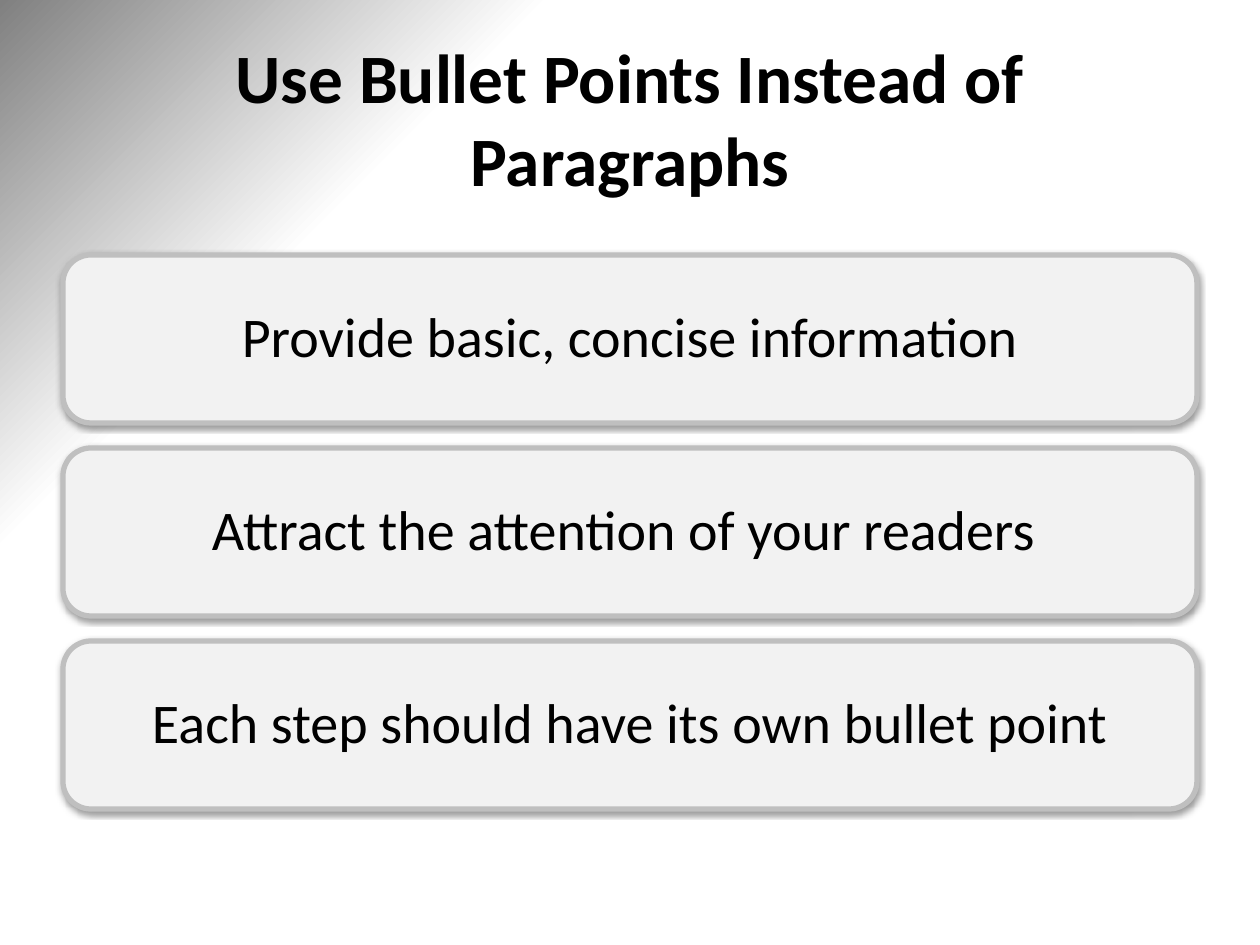
"""Build a slide with a title above three stacked bullet cards."""
import lxml.etree
import pptx
import pptx.dml.color
import pptx.enum.shapes
import pptx.enum.text
import pptx.oxml
import pptx.oxml.ns
import pptx.util

PX = 914400 / 126
BLACK = pptx.dml.color.RGBColor(0x00, 0x00, 0x00)
WHITE = pptx.dml.color.RGBColor(0xFF, 0xFF, 0xFF)
CORNER_GRAY = pptx.dml.color.RGBColor(0x80, 0x80, 0x80)
CARD_FILL = pptx.dml.color.RGBColor(0xF2, 0xF2, 0xF2)
CARD_BORDER = pptx.dml.color.RGBColor(0xBF, 0xBF, 0xBF)

LEFT, WIDTH = 63, 1134
TITLE_TOP, TITLE_HEIGHT = 38, 158
CARD_TOP, CARD_HEIGHT, CARD_PITCH = 255, 168, 193
TEXT_INSET, TEXT_MARGIN = 8, 16

TITLE = "Use Bullet Points Instead of Paragraphs"
POINTS = [
    "Provide basic, concise information",
    "Attract the attention of your readers ",
    "Each step should have its own bullet point",
]


def px(*lengths):
    return [pptx.util.Emu(round(length * PX)) for length in lengths]


def paint_background(slide):
    slide.background.fill.gradient()
    gradient = slide.element.find(".//" + pptx.oxml.ns.qn("a:gradFill"))
    radial = pptx.oxml.parse_xml(
        f'<a:gradFill {pptx.oxml.ns.nsdecls("a")} rotWithShape="1"><a:gsLst>'
        f'<a:gs pos="75000"><a:srgbClr val="{WHITE}"/></a:gs>'
        f'<a:gs pos="100000"><a:srgbClr val="{CORNER_GRAY}"/></a:gs></a:gsLst>'
        '<a:path path="circle"><a:fillToRect l="100000" t="100000"/></a:path>'
        '</a:gradFill>'
    )
    gradient.getparent().replace(gradient, radial)


def add_text(slide, text, left, top, width, height, *, size, bold=False,
             margin=None, line_spacing=None):
    frame = slide.shapes.add_textbox(*px(left, top, width, height)).text_frame
    frame.word_wrap = True
    frame.vertical_anchor = pptx.enum.text.MSO_ANCHOR.MIDDLE
    if margin is not None:
        (frame.margin_left, frame.margin_top,
         frame.margin_right, frame.margin_bottom) = px(*[margin] * 4)
    paragraph = frame.paragraphs[0]
    paragraph.alignment = pptx.enum.text.PP_ALIGN.CENTER
    paragraph.line_spacing = line_spacing
    run = paragraph.add_run()
    run.text = text
    run.font.name = "Calibri"
    run.font.size = pptx.util.Pt(size)
    run.font.bold = bold
    run.font.color.rgb = BLACK


def add_shadow(shape):
    shape.shadow.inherit = False
    effects = shape.element.spPr.find(pptx.oxml.ns.qn("a:effectLst"))
    effects.append(pptx.oxml.parse_xml(
        f'<a:outerShdw {pptx.oxml.ns.nsdecls("a")} blurRad="40000" dist="20000" '
        f'dir="5400000" rotWithShape="0"><a:srgbClr val="{BLACK}">'
        '<a:alpha val="38000"/></a:srgbClr></a:outerShdw>'
    ))


def add_card(slide, point, top):
    card = slide.shapes.add_shape(
        pptx.enum.shapes.MSO_SHAPE.ROUNDED_RECTANGLE,
        *px(LEFT, top, WIDTH, CARD_HEIGHT))
    card.fill.solid()
    card.fill.fore_color.rgb = CARD_FILL
    card.line.color.rgb = CARD_BORDER
    card.line.width = pptx.util.Pt(3)
    add_shadow(card)
    add_text(slide, point, LEFT + TEXT_INSET, top + TEXT_INSET,
             WIDTH - 2 * TEXT_INSET, CARD_HEIGHT - 2 * TEXT_INSET,
             size=32, margin=TEXT_MARGIN, line_spacing=0.9)


def main():
    deck = pptx.Presentation()
    deck.slide_width, deck.slide_height = px(1260, 945)
    slide = deck.slides.add_slide(deck.slide_layouts[6])
    paint_background(slide)
    add_text(slide, TITLE, LEFT, TITLE_TOP, WIDTH, TITLE_HEIGHT,
             size=39.6, bold=True)
    for row, point in enumerate(POINTS):
        add_card(slide, point, CARD_TOP + row * CARD_PITCH)
    deck.save("out.pptx")


if __name__ == "__main__":
    main()
